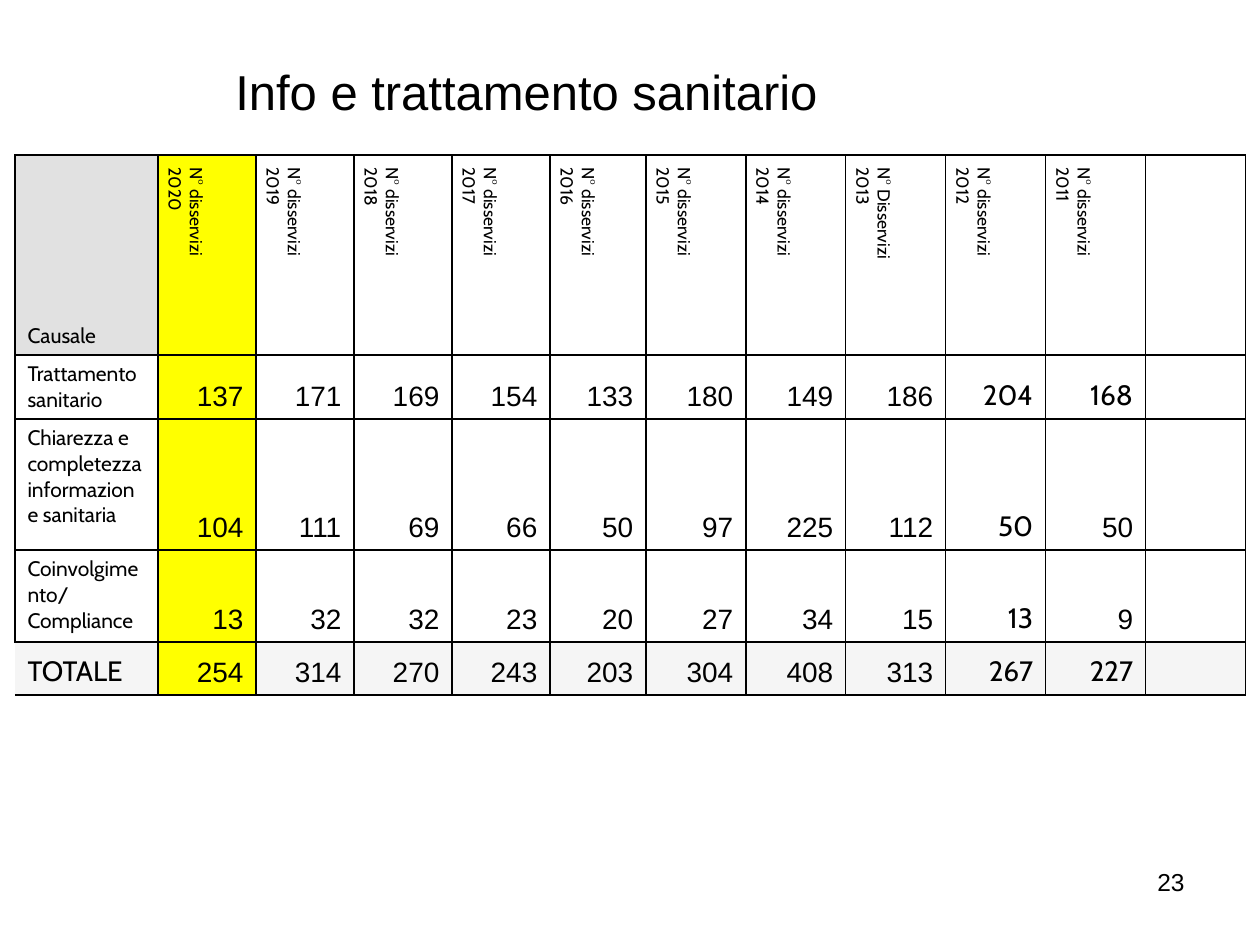
from lxml import etree
from pptx import Presentation
from pptx.dml.color import RGBColor
from pptx.enum.text import MSO_ANCHOR, MSO_AUTO_SIZE, PP_ALIGN
from pptx.oxml.ns import qn
from pptx.util import Pt

BLACK = RGBColor(0x00, 0x00, 0x00)
WHITE = RGBColor(0xFF, 0xFF, 0xFF)
YELLOW = RGBColor(0xFF, 0xFF, 0x00)
GREY = RGBColor(0xE1, 0xE1, 0xE1)
PALE = RGBColor(0xF5, 0xF5, 0xF5)
LEFT, RIGHT = PP_ALIGN.LEFT, PP_ALIGN.RIGHT
TOP, BOTTOM = MSO_ANCHOR.TOP, MSO_ANCHOR.BOTTOM
FIT_SHAPE = MSO_AUTO_SIZE.SHAPE_TO_FIT_TEXT
SANS, CABIN = "Arial", "Cabin"
EMU_PER_PX = 914400 / 126
HANGING = 48

COLUMN_WIDTHS = [143] + [98] * 4 + [96] + [100] * 6
ROW_HEIGHTS = [198, 64, 131, 92, 53]
YEARS = [
    (2020, 25), (2019, 25), (2018, 0), (2017, 25), (2016, 25),
    (2015, 12), (2014, 12), (2013, 25), (2012, 25), (2011, 25),
]
CAUSES = [
    ("Trattamento sanitario", [137, 171, 169, 154, 133, 180, 149, 186, 204, 168]),
    ("Chiarezza e completezza informazione sanitaria",
     [104, 111, 69, 66, 50, 97, 225, 112, 50, 50]),
    ("Coinvolgimento/Compliance", [13, 32, 32, 23, 20, 27, 34, 15, 13, 9]),
    ("TOTALE", [254, 314, 270, 243, 203, 304, 408, 313, 267, 227]),
]
TOTAL_ROW = len(CAUSES)
CABIN_COUNTS = {(row, 9) for row in range(1, 5)} | {(1, 10), (4, 10)}


def px(length):
    return round(length * EMU_PER_PX)


def write(frame, text, size=16, font=SANS, align=LEFT, hanging=0, before=0):
    for index, line in enumerate(text.split("\n")):
        paragraph = frame.paragraphs[0] if index == 0 else frame.add_paragraph()
        paragraph.alignment = align
        if index == 0 and before:
            paragraph.space_before = Pt(before)
        if hanging:
            properties = paragraph._p.get_or_add_pPr()
            properties.set("marL", str(px(hanging)))
            properties.set("indent", str(-px(hanging)))
        run = paragraph.add_run()
        run.text = line
        run.font.size = Pt(size)
        run.font.name = font
        run.font.color.rgb = BLACK


class SlideBuilder:
    def __init__(self, slide, border_color=BLACK, border_width=1):
        self.slide = slide
        self.border_color = border_color
        self.border_width = border_width

    def text(self, left, top, width, height, text, grow=False, **style):
        box = self.slide.shapes.add_textbox(px(left), px(top), px(width), px(height))
        frame = box.text_frame
        frame.word_wrap = True
        if grow:
            frame.auto_size = FIT_SHAPE
        write(frame, text, **style)

    def table(self, left, top, widths, heights):
        grid = self.slide.shapes.add_table(
            len(heights), len(widths), px(left), px(top),
            px(sum(widths)), px(sum(heights))).table
        grid.first_row = False
        grid.horz_banding = False
        for column, width in zip(grid.columns, widths):
            column.width = px(width)
        for row, height in zip(grid.rows, heights):
            row.height = px(height)
        return grid

    def cell(self, cell, fill, text="", anchor=TOP, vertical=False, open_left=False,
             **style):
        cell.vertical_anchor = anchor
        properties = cell._tc.get_or_add_tcPr()
        if vertical:
            properties.set("vert", "vert")
        for side in ("lnL", "lnR", "lnT", "lnB"):
            line = etree.SubElement(properties, qn(f"a:{side}"),
                                    w=str(Pt(self.border_width)))
            if side == "lnL" and open_left:
                etree.SubElement(line, qn("a:noFill"))
            else:
                paint = etree.SubElement(line, qn("a:solidFill"))
                etree.SubElement(paint, qn("a:srgbClr"), val=str(self.border_color))
        cell.fill.solid()
        cell.fill.fore_color.rgb = fill
        if text:
            write(cell.text_frame, text, **style)


def main():
    deck = Presentation()
    deck.slide_width, deck.slide_height = px(1260), px(945)
    builder = SlideBuilder(deck.slides.add_slide(deck.slide_layouts[6]))

    grid = builder.table(15, 155, COLUMN_WIDTHS, ROW_HEIGHTS)
    builder.cell(grid.cell(0, 0), GREY, "Causale", BOTTOM,
                 size=12, font=CABIN, hanging=HANGING)
    for col, (year, before) in enumerate(YEARS, 1):
        noun = "Disservizi" if year == 2013 else "disservizi"
        builder.cell(grid.cell(0, col), YELLOW if col == 1 else WHITE,
                     f"N° {noun}\n{year}", vertical=True,
                     size=10, font=CABIN, hanging=HANGING, before=before)

    for row, (cause, counts) in enumerate(CAUSES, 1):
        is_total = row == TOTAL_ROW
        row_fill = PALE if is_total else WHITE
        builder.cell(grid.cell(row, 0), row_fill, cause,
                     BOTTOM if is_total else TOP, open_left=is_total,
                     size=16 if is_total else 12, font=CABIN,
                     hanging=HANGING if is_total else 0)
        for col, count in enumerate(counts, 1):
            builder.cell(grid.cell(row, col), YELLOW if col == 1 else row_fill,
                         str(count), BOTTOM, align=RIGHT, hanging=HANGING,
                         font=CABIN if (row, col) in CABIN_COUNTS else SANS)

    spare_col = len(COLUMN_WIDTHS) - 1
    for row in range(len(ROW_HEIGHTS)):
        builder.cell(grid.cell(row, spare_col), PALE if row == TOTAL_ROW else WHITE)

    builder.text(223, 55, 774, 72, "Info e trattamento sanitario", grow=True, size=28)
    builder.text(903, 861, 294, 66, "23", size=14, align=RIGHT)
    deck.save("out.pptx")


if __name__ == "__main__":
    main()
